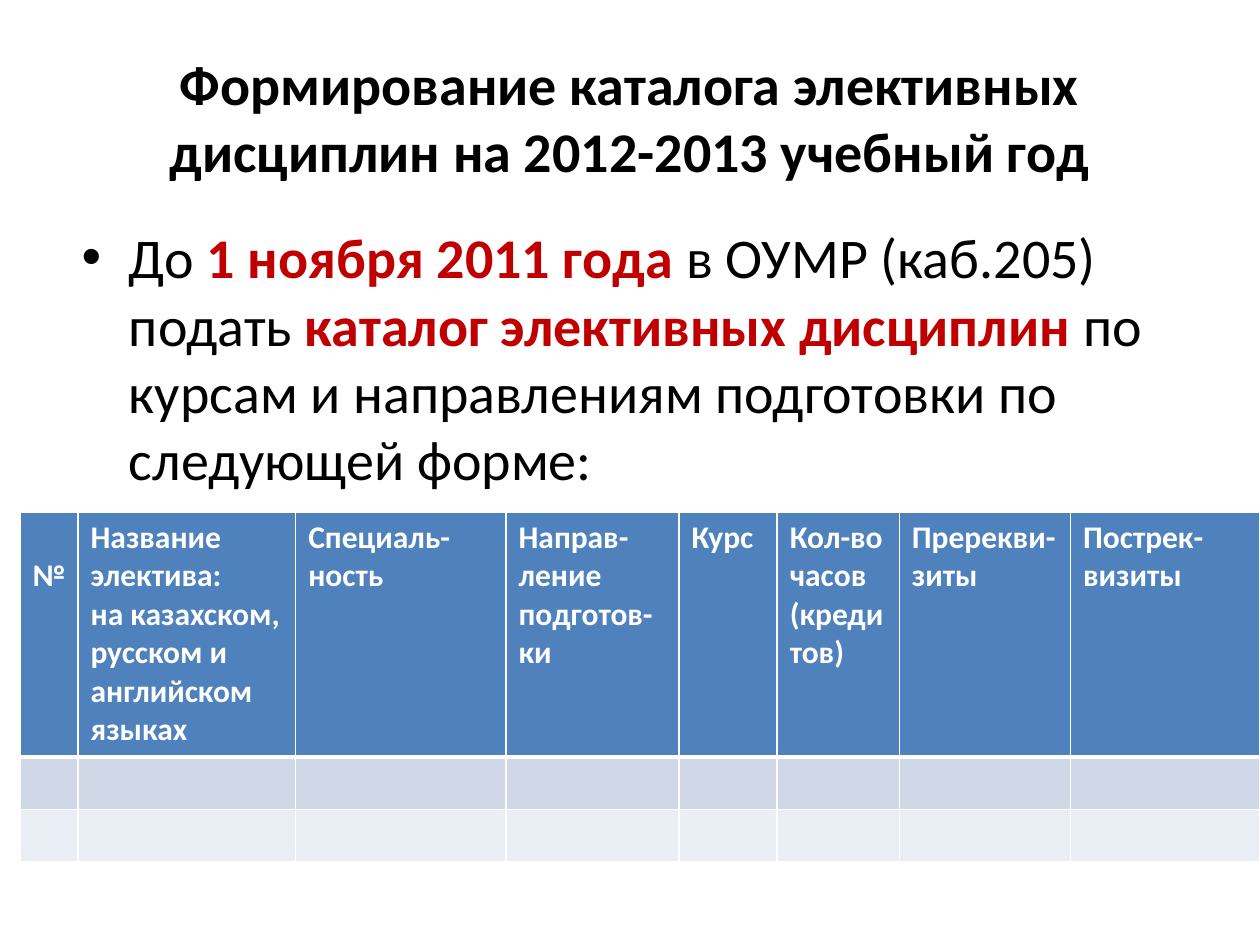
import pptx
import pptx.dml.color
import pptx.enum.text
import pptx.oxml.ns
import pptx.util
from lxml import etree

Pt = pptx.util.Pt
RGBColor = pptx.dml.color.RGBColor
PP_ALIGN = pptx.enum.text.PP_ALIGN
MSO_ANCHOR = pptx.enum.text.MSO_ANCHOR
qn = pptx.oxml.ns.qn

BLACK = RGBColor(0x00, 0x00, 0x00)
WHITE = RGBColor(0xFF, 0xFF, 0xFF)
RED = RGBColor(0xC0, 0x00, 0x00)
HEADER_BLUE = RGBColor(0x4F, 0x81, 0xBD)
BAND_DARK = RGBColor(0xD0, 0xD8, 0xE8)
BAND_LIGHT = RGBColor(0xE9, 0xED, 0xF4)


class SlideWriter:
    font = "Calibri"
    large = 32
    small = 18

    def __init__(self, slide):
        self.slide = slide

    def style(self, run, size, color, bold):
        run.font.name = self.font
        run.font.size = Pt(size)
        run.font.color.rgb = color
        run.font.bold = bold

    def text_frame(self, left, top, width, height, anchor):
        box = self.slide.shapes.add_textbox(Pt(left), Pt(top), Pt(width), Pt(height))
        frame = box.text_frame
        frame.word_wrap = True
        frame.vertical_anchor = anchor
        return frame

    def title(self, text, *place):
        frame = self.text_frame(*place, MSO_ANCHOR.MIDDLE)
        frame.text = text
        heading = frame.paragraphs[0]
        heading.alignment = PP_ALIGN.CENTER
        self.style(heading.runs[0], self.large, BLACK, True)

    def bullet(self, phrases, *place):
        """Write one bulleted paragraph; phrases are (text, highlighted)."""
        item = self.text_frame(*place, MSO_ANCHOR.TOP).paragraphs[0]
        properties = item._p.get_or_add_pPr()
        properties.set("marL", str(Pt(27)))
        properties.set("indent", str(-Pt(27)))
        etree.SubElement(properties, qn("a:buFont"), typeface="Arial")
        etree.SubElement(properties, qn("a:buChar"), char="•")
        for text, highlighted in phrases:
            run = item.add_run()
            run.text = text
            self.style(run, self.large, RED if highlighted else BLACK, highlighted)

    def borders(self, cell, bottom):
        properties = cell._tc.get_or_add_tcPr()
        widths = {"a:lnL": 1, "a:lnR": 1, "a:lnT": 1, "a:lnB": bottom}
        for position, (side, width) in enumerate(widths.items()):
            line = etree.Element(qn(side), w=str(Pt(width)))
            fill = etree.SubElement(line, qn("a:solidFill"))
            etree.SubElement(fill, qn("a:srgbClr"), val=str(WHITE))
            properties.insert(position, line)

    def table(self, headings, widths, heights, fills, left, top):
        table = self.slide.shapes.add_table(
            len(heights), len(widths), Pt(left), Pt(top),
            Pt(sum(widths)), Pt(sum(heights))).table
        for column, width in zip(table.columns, widths):
            column.width = Pt(width)
        for index, (row, height, fill) in enumerate(zip(table.rows, heights, fills)):
            row.height = Pt(height)
            for cell in row.cells:
                cell.fill.solid()
                cell.fill.fore_color.rgb = fill
                self.borders(cell, 1 if index else 3)
        for cell, heading in zip(table.rows[0].cells, headings):
            cell.text_frame.text = heading
            for paragraph in cell.text_frame.paragraphs:
                self.style(paragraph.runs[0], self.small, WHITE, True)
        return table


def main():
    deck = pptx.Presentation()
    deck.slide_width, deck.slide_height = Pt(720), Pt(540)
    writer = SlideWriter(deck.slides.add_slide(deck.slide_layouts[6]))

    # Title
    writer.title("Формирование каталога элективных дисциплин на 2012-2013 учебный год",
                 36, 21.6, 648, 90)

    # Deadline
    deadline = [
        ("До ", False),
        ("1 ноября 2011 года ", True),
        ("в ОУМР (каб.205) подать ", False),
        ("каталог элективных дисциплин ", True),
        ("по курсам и направлениям подготовки по следующей форме:", False),
    ]
    writer.bullet(deadline, 39.6, 123.8, 644.4, 399.6)

    # Catalogue form
    headings = [
        "№",
        "Название электива:\nна казахском, русском и английском языках",
        "Специаль-ность",
        "Направ-ление подготов-ки",
        "Курс",
        "Кол-во часов (кредитов)",
        "Пререкви-зиты",
        "Пострек-визиты",
    ]
    form = writer.table(headings,
                        widths=[33.2, 124.4, 120.2, 98.8, 56.2, 69.8, 97.8, 108],
                        heights=[140, 30, 30],
                        fills=[HEADER_BLUE, BAND_DARK, BAND_LIGHT],
                        left=11.4, top=292.6)
    # The number sign sits one line lower than the other headings
    form.cell(0, 0).margin_top = Pt(25.6)

    deck.save("out.pptx")


if __name__ == "__main__":
    main()
